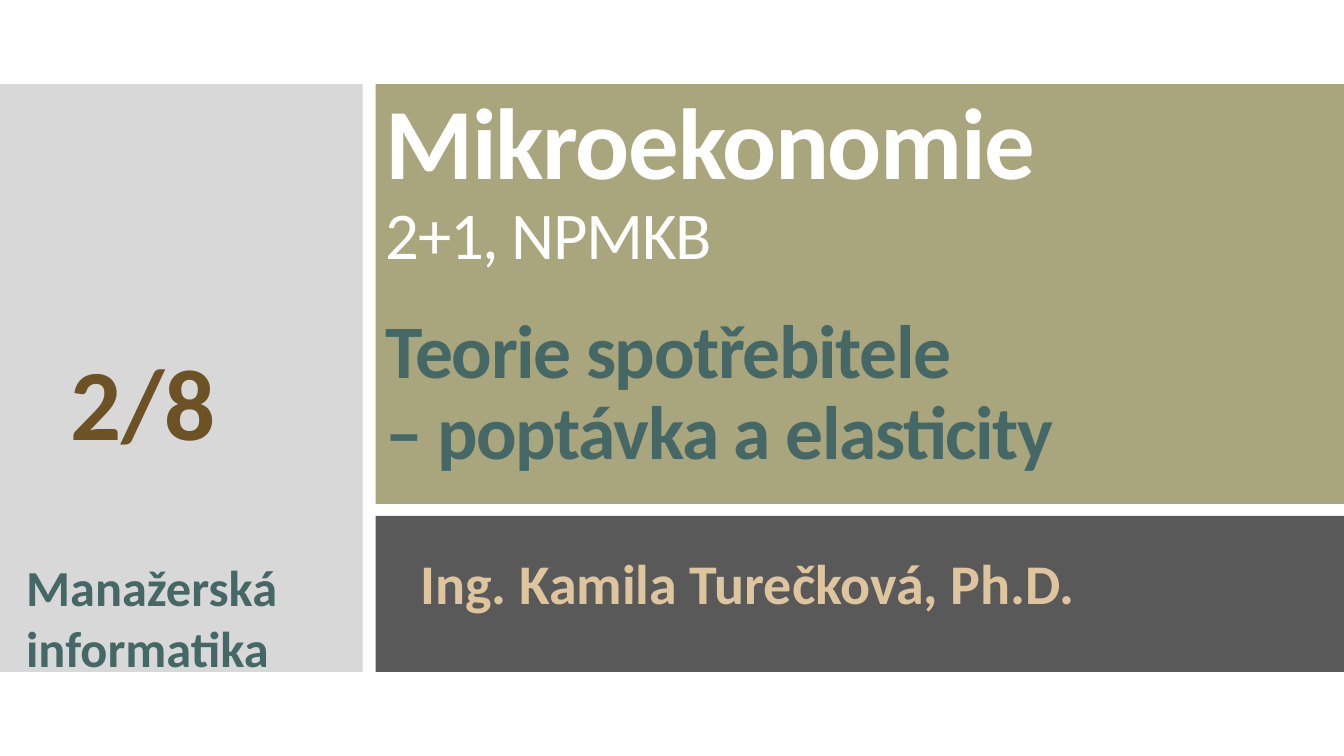
from pptx import Presentation
from pptx import util as u
from pptx.dml.color import RGBColor
from pptx.enum import shapes, text

COLORS = {
    "side": "D8D8D8", "olive": "A9A57C", "dark": "595959", "white": "FFFFFF",
    "teal": "456867", "sand": "DEC59E", "brown": "6D5225",
}
WIDTH, HEIGHT = 33.87, 19.05
TOP, BOTTOM = 2.12, 16.93
SIDE_WIDTH, MAIN_LEFT = 9.14, 9.47
TITLE_BOTTOM, AUTHOR_TOP = 12.7, 13.0

PANELS = [
    ("side", 0, TOP, SIDE_WIDTH, BOTTOM),
    ("olive", MAIN_LEFT, TOP, WIDTH, TITLE_BOTTOM),
    ("dark", MAIN_LEFT, AUTHOR_TOP, WIDTH, BOTTOM),
]
TITLE_LINES = [
    ("Mikroekonomie", dict(size=72, color="white")),
    ("2+1, NPMKB", dict(size=47.7, color="white", bold=False)),
    ("Teorie spotřebitele", dict(size=54, color="teal", before=28)),
    ("– poptávka a elasticity", dict(size=54, color="teal")),
]
LABELS = [
    ("Ing. Kamila Turečková, Ph.D.", (10.34, 13.89, 19.96, 2.13),
     dict(size=40, color="sand", line=0.9)),
    ("2/8", (1.52, 9.02, 6.68, 2.77), dict(size=72, color="brown", line=0.8)),
    ("Manažerská informatika", (0.41, 13.89, 7.8, 3.33),
     dict(size=36, color="teal")),
]


def add_panel(page, color, left, top, right, bottom):
    panel = page.shapes.add_shape(
        shapes.MSO_SHAPE.RECTANGLE,
        u.Cm(left), u.Cm(top), u.Cm(right - left), u.Cm(bottom - top))
    panel.shadow.inherit = False
    panel.fill.solid()
    panel.fill.fore_color.rgb = RGBColor.from_string(COLORS[color])
    panel.line.fill.background()


def add_box(page, area, anchor=text.MSO_ANCHOR.TOP):
    box = page.shapes.add_textbox(*map(u.Cm, area))
    box.text_frame.word_wrap = True
    box.text_frame.vertical_anchor = anchor
    return box.text_frame


def write(para, words, size, color, bold=True, line=1.0, before=0, spacing=0):
    para.line_spacing = line
    para.space_before = u.Pt(before)
    span = para.add_run()
    span.text = words
    span.font.name = "Calibri"
    span.font.size = u.Pt(size)
    span.font.bold = bold
    span.font.color.rgb = RGBColor.from_string(COLORS[color])
    if spacing:
        span.font._element.set("spc", str(spacing * 100))


def main():
    deck = Presentation()
    deck.slide_width, deck.slide_height = u.Cm(WIDTH), u.Cm(HEIGHT)
    page = deck.slides.add_slide(deck.slide_layouts[6])
    for panel in PANELS:
        add_panel(page, *panel)

    title = add_box(page, (MAIN_LEFT, 3.61, 24.38, 8.51), text.MSO_ANCHOR.BOTTOM)
    for index, (words, style) in enumerate(TITLE_LINES):
        para = title.add_paragraph() if index else title.paragraphs[0]
        write(para, words, line=0.9, spacing=-1, **style)

    for words, area, style in LABELS:
        write(add_box(page, area).paragraphs[0], words, **style)
    deck.save("out.pptx")


if __name__ == "__main__":
    main()
